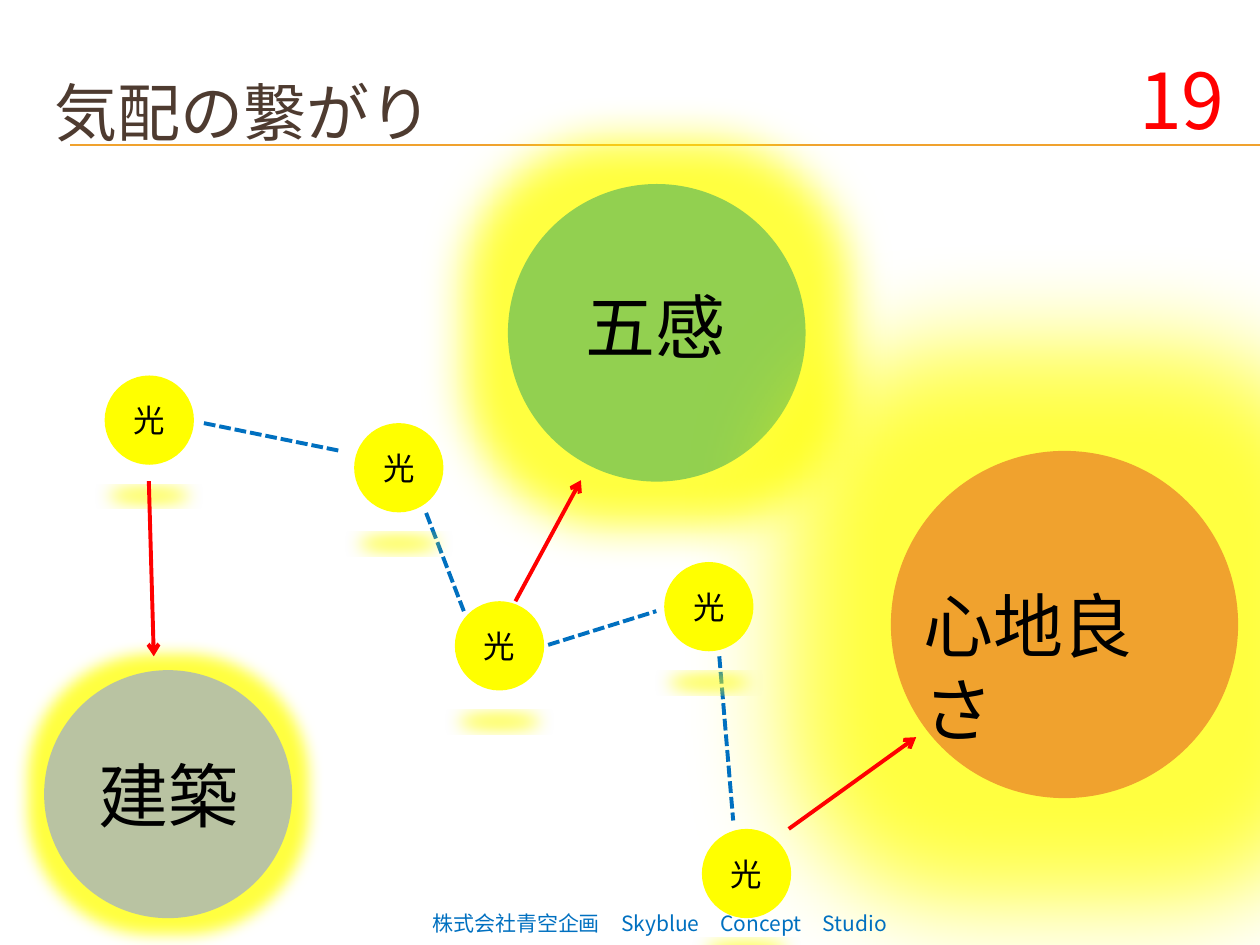
import pptx
import pptx.dml.color
import pptx.enum.dml
import pptx.enum.shapes
import pptx.enum.text
import pptx.oxml
import pptx.oxml.ns
import pptx.util

Cm = pptx.util.Cm
Pt = pptx.util.Pt
ALIGN = pptx.enum.text.PP_ALIGN
ANCHOR = pptx.enum.text.MSO_ANCHOR
OVAL = pptx.enum.shapes.MSO_SHAPE.OVAL
STRAIGHT = pptx.enum.shapes.MSO_CONNECTOR.STRAIGHT
FONT = "Noto Sans CJK JP"
NAMESPACE = pptx.oxml.ns.nsdecls("a")
BACK = 2  # index of the rearmost shape in the shape tree


def color(hex_string):
    return pptx.dml.color.RGBColor.from_string(hex_string)


def write(shape, text, size, hex_string, frame_format, align=ALIGN.LEFT):
    frame = shape.text_frame
    for name, value in frame_format.items():
        setattr(frame, name, value)
    para = frame.paragraphs[0]
    para.alignment = align
    span = para.add_run()
    span.text = text
    for name, value in {"size": Pt(size), "name": FONT}.items():
        setattr(span.font, name, value)
    span.font.color.rgb = color(hex_string)
    span.font._element.append(
        pptx.oxml.parse_xml(f'<a:ea {NAMESPACE} typeface="{FONT}"/>'))


deck = pptx.Presentation()
deck.slide_width, deck.slide_height = Cm(25.4), Cm(19.05)
slide = deck.slides.add_slide(deck.slide_layouts[6])
shapes = slide.shapes

# Lines: start x, start y, end x, end y in cm
title_rules = [(1.42, 2.92, 25.4, 2.92), (1.42, 2.94, 25.4, 2.94)]
light_links = [(4.11, 8.53, 6.86, 9.09), (8.59, 10.34, 9.35, 12.32),
               (11.05, 13, 13.23, 12.32), (14.5, 13.23, 14.78, 16.54)]
arrows = [(3, 9.7, 3.1, 13.23), (10.39, 12.12, 11.71, 9.68),
          (15.9, 16.71, 18.47, 14.86)]
line_styles = {
    "rule": {"hex": "F0A22E", "width": 0.75, "dash": None, "arrow": False},
    "link": {"hex": "0070C0", "width": 2.25, "arrow": False,
             "dash": pptx.enum.dml.MSO_LINE.SQUARE_DOT},
    "arrow": {"hex": "FF0000", "width": 2.25, "dash": None, "arrow": True},
}

# Large circles: left, top, diameter in cm, fill, opacity %, glow radius in pt
themes = [(0.89, 13.51, 5, "8597ED", 57, 18),
          (10.24, 3.71, 6, "92D050", 100, 50),
          (17.96, 9.09, 7, "F0A22E", 100, 120)]
for left, top, diameter, fill, opacity, glow in themes:
    circle = shapes.add_shape(OVAL, Cm(left), Cm(top), Cm(diameter), Cm(diameter))
    circle.fill.solid()
    circle.fill.fore_color.rgb = color(fill)
    circle.line.fill.background()
    if opacity < 100:
        fill_color = circle._element.spPr.find(".//" + pptx.oxml.ns.qn("a:srgbClr"))
        fill_color.append(pptx.oxml.parse_xml(
            f'<a:alpha {NAMESPACE} val="{opacity * 1000}"/>'))
    circle._element.spPr.append(pptx.oxml.parse_xml(
        f'<a:effectLst {NAMESPACE}><a:glow rad="{Pt(glow)}"><a:srgbClr val="FFFF00">'
        '<a:alpha val="75000"/></a:srgbClr></a:glow></a:effectLst>'))

# Small lights, each with a flattened yellow shadow below
light_format = {"word_wrap": True, "vertical_anchor": ANCHOR.MIDDLE}
lights = []
for left, top in [(2.11, 7.57), (7.14, 8.53), (9.17, 12.12),
                  (13.39, 11.33), (14.15, 16.71)]:
    light = shapes.add_shape(OVAL, Cm(left), Cm(top), Cm(1.8), Cm(1.8))
    light.fill.solid()
    light.fill.fore_color.rgb = color("FFFF00")
    light.line.fill.background()
    light._element.spPr.append(pptx.oxml.parse_xml(
        f'<a:effectLst {NAMESPACE}><a:outerShdw blurRad="{Pt(10)}" dist="{Pt(13)}" '
        'dir="5400000" sx="90000" sy="-19000" algn="b" rotWithShape="0">'
        '<a:srgbClr val="FFFF00"><a:alpha val="69000"/></a:srgbClr>'
        '</a:outerShdw></a:effectLst>'))
    write(light, "光", 18, "000000", light_format, ALIGN.CENTER)
    lights.append(light)
shapes._spTree.insert(BACK, lights[0]._element)

# Rules go behind everything, links and arrows just under the other lights
for style_name, lines in [("rule", title_rules), ("link", light_links),
                          ("arrow", arrows)]:
    style = line_styles[style_name]
    for ends in lines:
        connector = shapes.add_connector(STRAIGHT, *[Cm(value) for value in ends])
        connector.line.color.rgb = color(style["hex"])
        connector.line.width = Pt(style["width"])
        connector.line.dash_style = style["dash"]
        if style["arrow"]:
            connector.line._get_or_add_ln().append(
                pptx.oxml.parse_xml(f'<a:tailEnd {NAMESPACE} type="arrow"/>'))
        connector._element.spPr.append(
            pptx.oxml.parse_xml(f"<a:effectLst {NAMESPACE}/>"))
        if style_name == "rule":
            shapes._spTree.insert(BACK, connector._element)
        else:
            lights[1]._element.addprevious(connector._element)

# Texts: left, top, width, height in cm, wording, size, colour, anchor, alignment
texts = [
    (0.84, 1.07, 24.13, 2.34, "気配の繋がり", 36, "4E3B30", ANCHOR.MIDDLE, ALIGN.LEFT),
    (1.73, 15.04, 3.35, 1.96, "建築", 40, "000000", ANCHOR.MIDDLE, ALIGN.LEFT),
    (11.56, 5.59, 3.35, 1.96, "五感", 40, "000000", ANCHOR.MIDDLE, ALIGN.LEFT),
    (18.36, 11.61, 5.84, 1.96, "心地良さ", 40, "000000", ANCHOR.TOP, ALIGN.LEFT),
    (7.67, 18.24, 10.46, 0.81, "株式会社青空企画　Skyblue　Concept　Studio", 12,
     "0070C0", ANCHOR.TOP, ALIGN.RIGHT),
    (22.02, 0.94, 2.92, 0.69, "19", 44, "FF0000", ANCHOR.TOP, ALIGN.RIGHT),
]
for left, top, width, height, text, size, hex_string, anchor, align in texts:
    box = shapes.add_textbox(Cm(left), Cm(top), Cm(width), Cm(height))
    write(box, text, size, hex_string,
          {"word_wrap": True, "vertical_anchor": anchor}, align)

deck.save("out.pptx")
